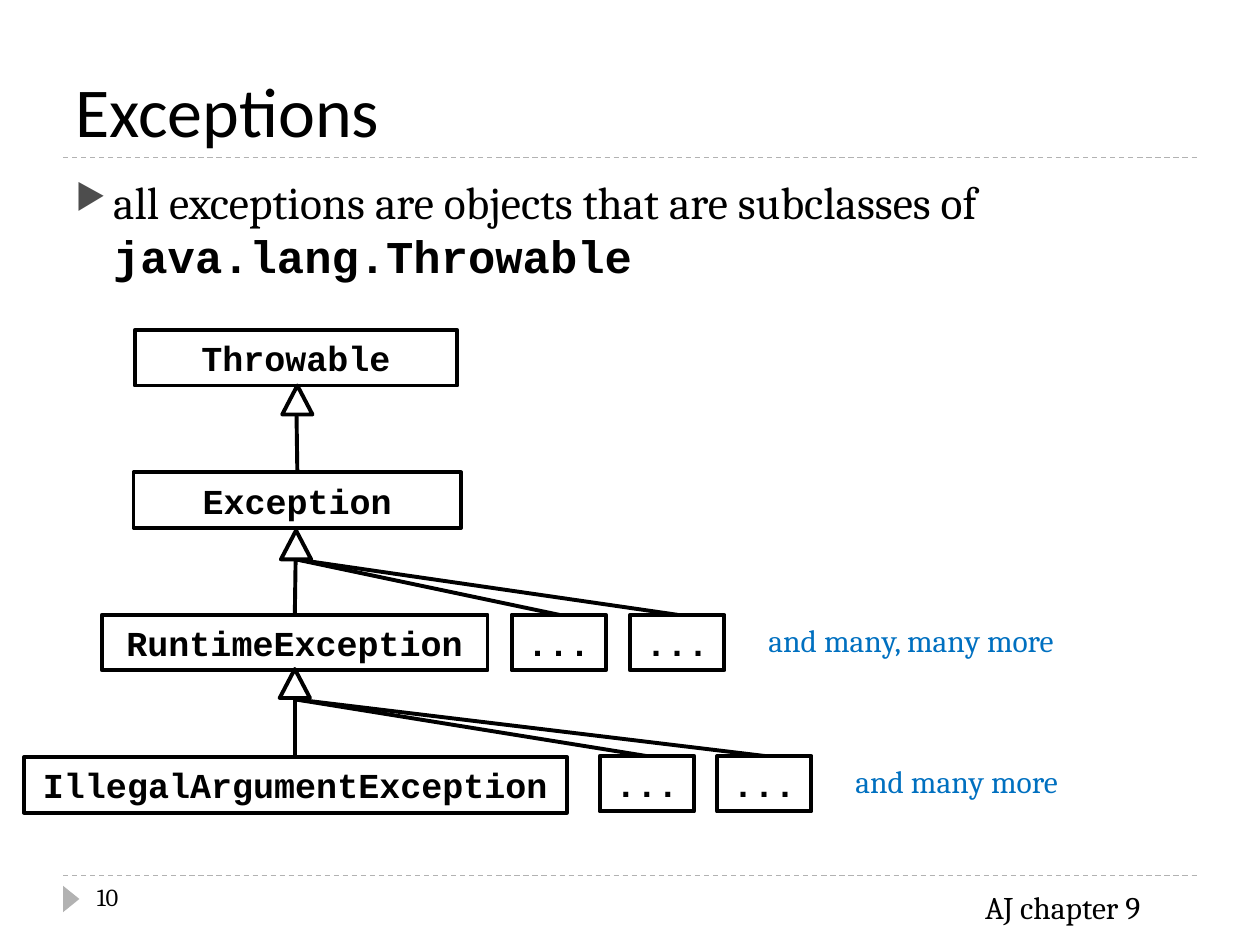
from lxml.etree import SubElement
from pptx import Presentation
from pptx.dml.color import RGBColor
from pptx.enum.dml import MSO_LINE
from pptx.enum.shapes import MSO_CONNECTOR, MSO_SHAPE
from pptx.enum.text import MSO_ANCHOR, PP_ALIGN
from pptx.oxml.ns import qn
from pptx.util import Inches, Pt

HUES = {
    "ink": RGBColor.from_string("000000"),
    "note": RGBColor.from_string("0070C0"),
    "rule": RGBColor.from_string("B2B2B2"),
    "paper": RGBColor.from_string("FFFFFF"),
}
CODE, BODY = "Courier New", "Cambria"

deck = Presentation()
deck.slide_width, deck.slide_height = Inches(10), Inches(7.5)
slide = deck.slides.add_slide(deck.slide_layouts[5])
shapes = slide.shapes


def add_run(para, text, size, font=BODY, hue="ink", bold=False):
    run = para.add_run()
    run.text = text
    run.font.size, run.font.name, run.font.bold = Pt(size), font, bold
    run.font.color.rgb = HUES[hue]


def add_line(x1, y1, x2, y2, hue="ink", width=2.25):
    line = shapes.add_connector(MSO_CONNECTOR.STRAIGHT, Inches(x1), Inches(y1),
                                Inches(x2), Inches(y2))
    line.line.color.rgb, line.line.width = HUES[hue], Pt(width)
    SubElement(line._element.spPr, qn("a:effectLst"))
    return line


# Dashed rules and page marker
for y in (1.25, 6.95):
    add_line(0.5, y, 9.5, y, "rule", 0.75).line.dash_style = MSO_LINE.DASH
mark = shapes.add_shape(MSO_SHAPE.ISOSCELES_TRIANGLE, Inches(0.46), Inches(7.07),
                        Inches(0.21), Inches(0.13))
mark.rotation = 90
mark.shadow.inherit = False
mark.fill.solid()
mark.fill.fore_color.rgb = HUES["rule"]
mark.line.fill.background()

# Title
title = shapes.title
title.left, title.top = Inches(0.5), Inches(0.17)
title.width, title.height = Inches(9), Inches(1.08)
title.text_frame.vertical_anchor = MSO_ANCHOR.BOTTOM
para = title.text_frame.paragraphs[0]
para.alignment = PP_ALIGN.LEFT
add_run(para, "Exceptions", 40, "Calibri")

# Bulleted statement
body = shapes.add_textbox(Inches(0.5), Inches(1.33), Inches(9), Inches(1.1))
body.text_frame.word_wrap = True
para = body.text_frame.paragraphs[0]
para.space_before = Pt(6)
props = para._p.get_or_add_pPr()
props.set("marL", str(Inches(0.3)))
props.set("indent", str(-Inches(0.3)))
SubElement(SubElement(props, qn("a:buClr")), qn("a:srgbClr"), val="4D4D4D")
SubElement(props, qn("a:buSzPct"), val="76000")
SubElement(props, qn("a:buChar"), char="▶")
add_run(para, "all exceptions are objects that are subclasses of ", 26)
add_run(para, "java.lang.Throwable", 26, CODE, bold=True)

# Class boxes: name, left, top, width
boxes = [
    ("Throwable", 1.07, 2.62, 2.56),
    ("Exception", 1.06, 3.75, 2.6),
    ("RuntimeException", 0.81, 4.88, 3.06),
    ("...", 4.06, 4.88, 0.75),
    ("...", 5, 4.88, 0.75),
    ("IllegalArgumentException", 0.19, 6.01, 4.31),
    ("...", 4.76, 6, 0.75),
    ("...", 5.69, 6, 0.75),
]
for name, x, y, w in boxes:
    box = shapes.add_shape(MSO_SHAPE.RECTANGLE, Inches(x), Inches(y),
                           Inches(w), Inches(0.44))
    box.shadow.inherit = False
    box.fill.background()
    box.line.color.rgb, box.line.width = HUES["ink"], Pt(2.25)
    frame = box.text_frame
    frame.word_wrap = False
    frame.vertical_anchor = MSO_ANCHOR.MIDDLE
    frame.paragraphs[0].alignment = PP_ALIGN.CENTER
    add_run(frame.paragraphs[0], name, 20, CODE, bold=True)

# Links from parent to child: upright stems, then slanted branches
links = [
    (2.35, 3.06, 2.36, 3.75), (2.35, 4.18, 2.34, 4.88), (2.34, 5.31, 2.34, 6.01),
    (2.35, 4.44, 4.44, 4.88), (2.35, 4.44, 5.38, 4.88),
    (2.34, 5.55, 5.13, 6), (2.34, 5.55, 6.07, 6),
]
for ends in links:
    add_line(*ends)

# Hollow inheritance heads
for x, y in ((2.24, 3.06), (2.23, 4.21), (2.22, 5.31)):
    head = shapes.add_shape(MSO_SHAPE.ISOSCELES_TRIANGLE, Inches(x), Inches(y),
                            Inches(0.24), Inches(0.23))
    head.shadow.inherit = False
    head.fill.solid()
    head.fill.fore_color.rgb = HUES["paper"]
    head.line.color.rgb, head.line.width = HUES["ink"], Pt(2.25)

# Side notes, page number and chapter
notes = [
    ("and many, many more", 6, 4.88, 2.62, 18, "note"),
    ("and many more", 6.69, 6, 1.91, 18, "note"),
    ("10", 0.67, 6.95, 2.17, 14, "ink"),
    ("AJ chapter 9", 7.72, 7, 1.53, 18, "ink"),
]
for text, x, y, w, size, hue in notes:
    note = shapes.add_textbox(Inches(x), Inches(y), Inches(w), Inches(0.4))
    note.text_frame.word_wrap = True
    add_run(note.text_frame.paragraphs[0], text, size, hue=hue)

deck.save("out.pptx")
